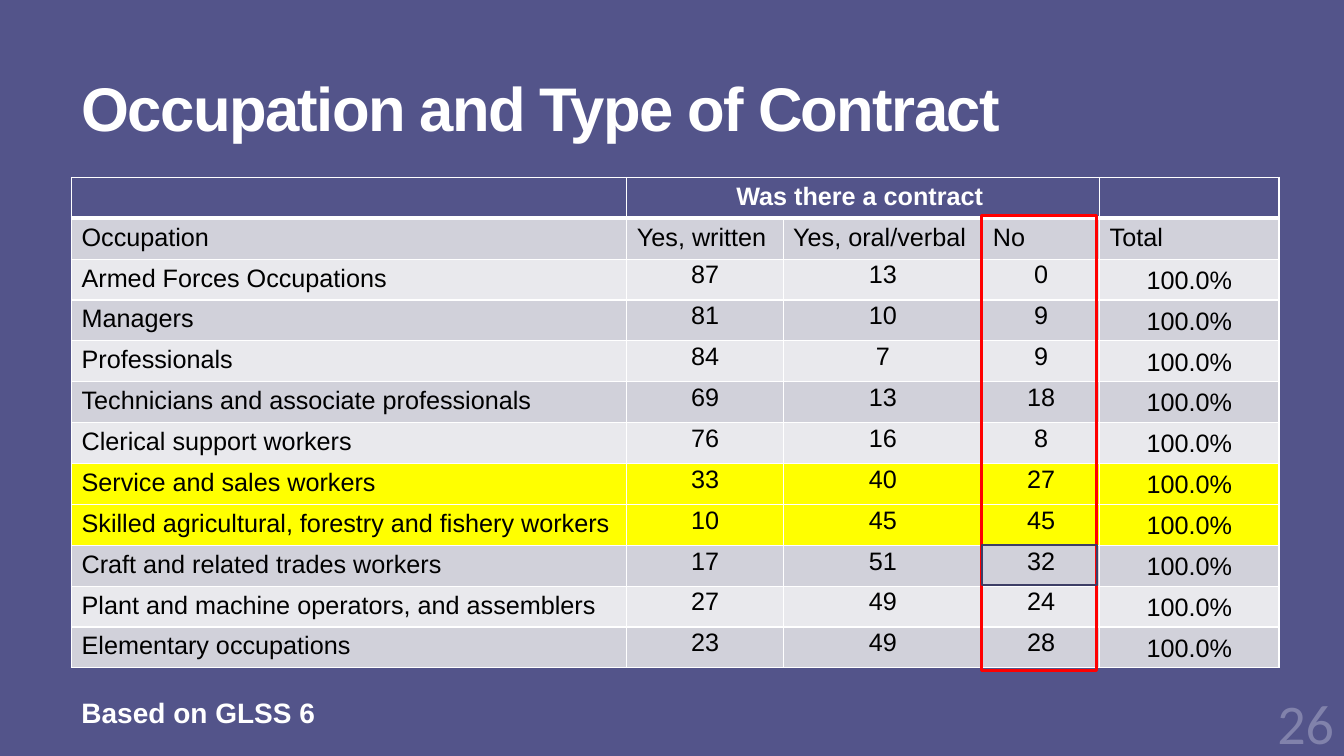
from typing import NamedTuple

from lxml import etree
from pptx import Presentation
from pptx.dml.color import RGBColor
from pptx.enum.shapes import MSO_SHAPE
from pptx.enum.text import MSO_ANCHOR, MSO_AUTO_SIZE, PP_ALIGN
from pptx.oxml.ns import qn
from pptx.util import Pt

LEFT, CENTER, RIGHT = PP_ALIGN.LEFT, PP_ALIGN.CENTER, PP_ALIGN.RIGHT
TOP, MIDDLE = MSO_ANCHOR.TOP, MSO_ANCHOR.MIDDLE
RECT = MSO_SHAPE.RECTANGLE
FIXED = MSO_AUTO_SIZE.NONE

PURPLE = RGBColor(0x53, 0x54, 0x8A)
WHITE = RGBColor(0xFF, 0xFF, 0xFF)
BLACK = RGBColor(0, 0, 0)
DARK = RGBColor(0xD1, 0xD1, 0xDA)
LIGHT = RGBColor(0xE9, 0xE9, 0xED)
YELLOW = RGBColor(0xFF, 0xFF, 0)
RED = RGBColor(0xFF, 0, 0)
NAVY = RGBColor(0x3D, 0x3E, 0x66)
MUTED = RGBColor(0x81, 0x82, 0xAB)

X, Y, ROW = 51.1, 126.7, 29.2
COLS = [396.7, 111.6, 142.6, 83.5, 128.2]
NO_COL = 3


class Job(NamedTuple):
    name: str
    written: int
    oral: int
    none: int
    marked: bool = False


class Frame(NamedTuple):
    """An outline around cells of the No column."""
    top: float
    height: float
    color: RGBColor
    weight: float


HEADS = ["Occupation", "Yes, written", "Yes, oral/verbal", "No", "Total"]
JOBS = [
    Job("Armed Forces Occupations", 87, 13, 0),
    Job("Managers", 81, 10, 9),
    Job("Professionals", 84, 7, 9),
    Job("Technicians and associate professionals", 69, 13, 18),
    Job("Clerical support workers", 76, 16, 8),
    Job("Service and sales workers", 33, 40, 27, True),
    Job("Skilled agricultural, forestry and fishery workers", 10, 45, 45, True),
    Job("Craft and related trades workers", 17, 51, 32),
    Job("Plant and machine operators, and assemblers", 27, 49, 24),
    Job("Elementary occupations", 23, 49, 28),
]
FRAMES = [
    Frame(154.1, 324.7, RED, 2.25),
    Frame(Y + 9 * ROW, 28.1, NAVY, 1.5),
]


def write(frame, text: str, size: float, color: RGBColor,
          bold: bool = False, align=LEFT, font: str | None = "Arial"):
    par = frame.paragraphs[0]
    par.alignment = align
    run = par.add_run()
    run.text = text
    run.font.size = Pt(size)
    run.font.bold = bold
    run.font.color.rgb = color
    if font:
        run.font.name = font
    return par, run


def edge(cell, base: float) -> None:
    """Draw white cell borders; base is the weight of the lower one."""
    props = cell._tc.get_or_add_tcPr()
    for i, side in enumerate("LRTB"):
        weight = base if side == "B" else 1
        line = etree.Element(qn(f"a:ln{side}"), w=str(Pt(weight)))
        fill = etree.SubElement(line, qn("a:solidFill"))
        etree.SubElement(fill, qn("a:srgbClr"), val=str(WHITE))
        props.insert(i, line)


def paint(cell, color: RGBColor, base: float = 1) -> None:
    cell.fill.solid()
    cell.fill.fore_color.rgb = color
    edge(cell, base)


def value(cell, text: str, side: float, anchor) -> None:
    """Write a centred figure in a cell with tight margins."""
    cell.margin_left = cell.margin_right = Pt(side)
    cell.margin_top = cell.margin_bottom = Pt(0)
    cell.vertical_anchor = anchor
    par, _ = write(cell.text_frame, text, 18, BLACK, align=CENTER)
    par.line_spacing = 1.07


def add_grid(slide) -> None:
    count = len(JOBS) + 2
    grid = slide.shapes.add_table(
        count, len(COLS), Pt(X), Pt(Y), Pt(sum(COLS)), Pt(count * ROW)).table
    for col, width in zip(grid.columns, COLS):
        col.width = Pt(width)
    for row in grid.rows:
        row.height = Pt(ROW)

    for c, head in enumerate(HEADS):
        paint(grid.cell(0, c), PURPLE, 3)
        paint(grid.cell(1, c), DARK)
        write(grid.cell(1, c).text_frame, head, 18, BLACK)
    grid.cell(0, 1).merge(grid.cell(0, NO_COL))
    write(grid.cell(0, 1).text_frame, "Was there a contract ", 18, WHITE,
          True, CENTER)

    for r, job in enumerate(JOBS, 2):
        band = YELLOW if job.marked else (DARK if r % 2 else LIGHT)
        for c in range(len(COLS)):
            paint(grid.cell(r, c), band)
        write(grid.cell(r, 0).text_frame, job.name, 18, BLACK)
        for c, share in enumerate((job.written, job.oral, job.none), 1):
            value(grid.cell(r, c), str(share), 5, TOP)
        value(grid.cell(r, 4), "100.0%", 4.3, MIDDLE)


def add_frame(slide, item: Frame) -> None:
    left = X + sum(COLS[:NO_COL]) - 0.7
    box = slide.shapes.add_shape(
        RECT, Pt(left), Pt(item.top), Pt(82.1), Pt(item.height))
    box.shadow.inherit = False
    box.fill.background()
    box.line.color.rgb = item.color
    box.line.width = Pt(item.weight)


def add_label(slide, left: float, top: float, width: float, height: float):
    frame = slide.shapes.add_textbox(
        Pt(left), Pt(top), Pt(width), Pt(height)).text_frame
    frame.word_wrap = True
    return frame


def add_title(slide) -> None:
    title = slide.shapes.title
    title.left, title.top = Pt(X), Pt(15.1)
    title.width, title.height = Pt(848.2), Pt(130.3)
    frame = title.text_frame
    frame.auto_size = FIXED
    frame.vertical_anchor = MIDDLE
    par, run = write(frame, "Occupation and Type of Contract", 44, WHITE, True)
    par.line_spacing = 0.85
    run.font._element.set("spc", "-120")


def main() -> None:
    deck = Presentation()
    deck.slide_width, deck.slide_height = Pt(960), Pt(540)
    slide = deck.slides.add_slide(deck.slide_layouts[5])
    back = slide.background.fill
    back.solid()
    back.fore_color.rgb = PURPLE

    add_title(slide)
    add_grid(slide)
    for item in FRAMES:
        add_frame(slide, item)
    write(add_label(slide, X, 493.2, 182.9, 31.7), "Based on GLSS 6", 20,
          WHITE, True)
    # The page number keeps the theme font.
    write(add_label(slide, 880, 488.5, 80, 50), "26", 40, MUTED,
          align=RIGHT, font=None)
    deck.save("out.pptx")


if __name__ == "__main__":
    main()
